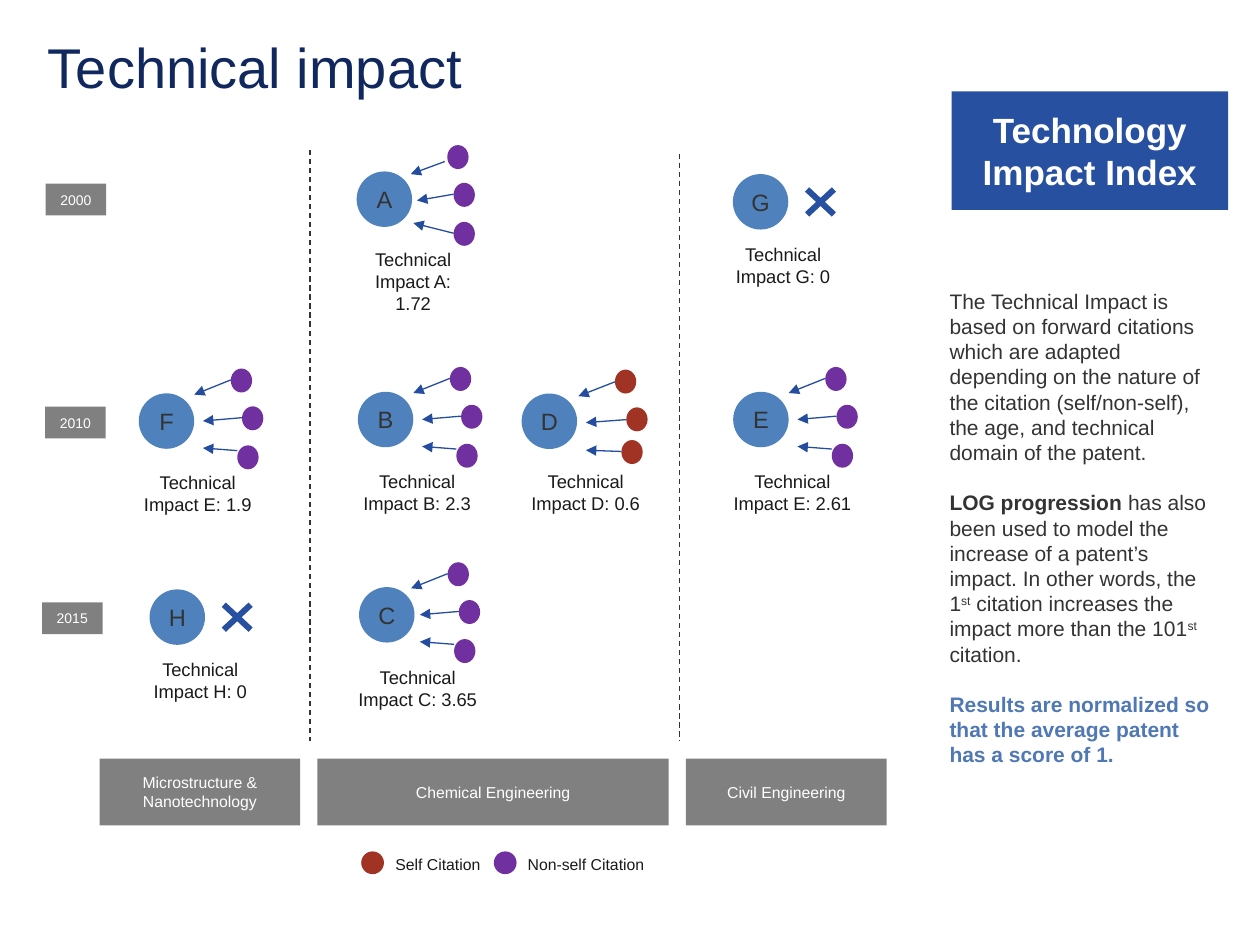
from pptx import Presentation
from pptx.dml.color import RGBColor
from pptx.enum import dml, shapes, text
from pptx.oxml.ns import qn
from pptx.util import Pt
from lxml import etree

NAVY = RGBColor(0x10, 0x28, 0x5D)
BLUE = RGBColor(0x28, 0x50, 0xA0)
ARROW = RGBColor(0x24, 0x4D, 0x9F)
SKY = RGBColor(0x4F, 0x81, 0xBD)
NOTE = RGBColor(0x50, 0x78, 0xB4)
PURPLE = RGBColor(0x70, 0x30, 0xA0)
RED = RGBColor(0xA1, 0x33, 0x25)
GRAY = RGBColor(0x80, 0x80, 0x80)
DARK = RGBColor(0x33, 0x33, 0x33)
INK = RGBColor(0x1A, 0x1A, 0x1A)
WHITE = RGBColor(0xFF, 0xFF, 0xFF)

KIND = shapes.MSO_SHAPE
ALIGN = text.PP_ALIGN
ANCHOR = text.MSO_ANCHOR

deck = Presentation()
deck.slide_width, deck.slide_height = Pt(720), Pt(540)
slide = deck.slides.add_slide(deck.slide_layouts[5])


def write(para, words, size=12, color=INK, bold=False, align=None, base=None):
    """Add one formatted run to a paragraph."""
    run = para.add_run()
    run.text = words
    run.font.name = "Arial"
    run.font.size = Pt(size)
    run.font.bold = bold
    run.font.color.rgb = color
    if align is not None:
        para.alignment = align
    if base:
        run.font._element.set("baseline", str(base * 1000))


def place(kind, x, y, w, h, fill=None):
    """Add a plain filled shape, or a text box if kind is None; return its first paragraph."""
    spot = Pt(x), Pt(y), Pt(w), Pt(h)
    if kind is None:
        shape = slide.shapes.add_textbox(*spot)
        shape.text_frame.word_wrap = True
        return shape.text_frame.paragraphs[0]
    shape = slide.shapes.add_shape(kind, *spot)
    shape.shadow.inherit = False
    shape.fill.solid()
    shape.fill.fore_color.rgb = fill
    shape.line.fill.background()
    if kind == KIND.MATH_MULTIPLY:
        shape.adjustments[0] = 0.125
    frame = shape.text_frame
    frame.vertical_anchor = ANCHOR.MIDDLE
    if kind == KIND.OVAL:
        frame.margin_left = frame.margin_right = 0
        frame.margin_top = frame.margin_bottom = 0
    return frame.paragraphs[0]


# Title
title = slide.shapes.title
title.left, title.top, title.width, title.height = Pt(20.2), Pt(15.1), Pt(680.4), Pt(95.8)
title.text_frame.vertical_anchor = ANCHOR.TOP
title.text_frame.auto_size = text.MSO_AUTO_SIZE.NONE
write(title.text_frame.paragraphs[0], "Technical impact", size=32, color=NAVY, align=ALIGN.LEFT)

# Years and technical fields
for x, y, year in [(26.1, 105, "2000"), (25.8, 232.4, "2010"), (24, 344.2, "2015")]:
    write(place(KIND.RECTANGLE, x, y, 34.6, 18.2, GRAY), year,
          size=8, color=WHITE, align=ALIGN.CENTER)
for x, w, field in [(56.9, 114.7, "Microstructure & Nanotechnology"),
                    (181.4, 200.7, "Chemical Engineering"),
                    (392, 114.7, "Civil Engineering")]:
    write(place(KIND.RECTANGLE, x, 433.5, w, 38.2, GRAY), field,
          size=9, color=WHITE, align=ALIGN.CENTER)

# Citation fans, relative to the patent circle:
# dot x, dot y, arrow start x and y within the dot, arrow tip x, tip y
FAN = [(52.6, -14.2, 0, 6.5, 31.7, 0.7),
       (59, 7.4, 0, 6.5, 36.7, 15.8),
       (56.3, 29.7, 0, 3, 36.7, 31.2)]
FAN_A = [(51.8, -15.1, -1.4, 9.4, 30.9, 1.5),
         (55.4, 6.5, 0, 6.5, 34.5, 16.6),
         (55.4, 28.8, 0, 6.5, 32.4, 29.5)]
FAN_D = [(53.3, -13.7, 0, 7, 32.4, 1.5),
         (59.8, 7.9, 0, 7, 36.7, 16.6),
         (57, 26.6, 0, 6.5, 36.7, 32.4)]

# Patents: letter, circle x, y, label, label x, y, width, fan, fan shift, dot colour
PATENTS = [
    ("A", 203.8, 98, "A: 1.72", 195.8, 138.2, 80.6, FAN_A, 0, PURPLE),
    ("B", 204.5, 223.9, "B: 2.3", 196.6, 265, 83.5, FAN, 0, PURPLE),
    ("C", 205.2, 335.5, "C: 3.65", 196.6, 377.3, 84.2, FAN, -2, PURPLE),
    ("D", 298.1, 224.9, "D: 0.6", 293, 265, 83.5, FAN_D, 0, RED),
    ("E", 419, 223.9, "E: 2.61", 411.1, 265, 83.5, FAN, 0, PURPLE),
    ("F", 79.3, 224.8, "E: 1.9", 71.3, 265.9, 83.5, FAN, 0, PURPLE),
    ("G", 418.8, 99.5, "G: 0", 405.4, 135.4, 84.2, None, 0, None),
    ("H", 85.5, 336.8, "H: 0", 71.3, 372.4, 86.4, None, 0, None),
]
links = []
for name, x, y, score, left, top, width, fan, shift, color in PATENTS:
    write(place(KIND.OVAL, x, y, 31.7, 31.7, SKY), name,
          size=13.5, color=DARK, align=ALIGN.CENTER)
    write(place(None, left, top, width, 32.4), "Technical Impact " + score,
          size=10.5, align=ALIGN.CENTER)
    if fan is None:
        place(KIND.MATH_MULTIPLY, x + 35.3, y + 2.2, 29.5, 27.4, BLUE)
        continue
    for dx, dy, sx, sy, tx, ty in fan:
        dx, tx = x + dx + shift, x + tx + shift
        place(KIND.OVAL, dx, y + dy, 12.2, 13.7, color)
        links.append((dx + sx, y + dy + sy, tx, y + ty, ARROW, True))

# Arrows and dashed column dividers
links += [(177.1, 85.7, 177.1, 423.4, DARK, False),
          (388.1, 87.8, 388.1, 423.4, DARK, False)]
for x, y, tx, ty, color, arrow in links:
    link = slide.shapes.add_connector(shapes.MSO_CONNECTOR.STRAIGHT, Pt(x), Pt(y), Pt(tx), Pt(ty))
    link.line.width = Pt(0.75)
    link.line.color.rgb = color
    if arrow:
        etree.SubElement(link.line._get_or_add_ln(), qn("a:tailEnd"), type="triangle")
    else:
        link.line.dash_style = dml.MSO_LINE.DASH
    etree.SubElement(link._element.spPr, qn("a:effectLst"))

# Legend
for x, gap, w, color, words in [(206.4, 12.5, 108.7, RED, "Self Citation"),
                                (282.2, 12.3, 86, PURPLE, "Non-self Citation")]:
    place(KIND.OVAL, x, 486.5, 13, 13, color)
    write(place(None, x + gap, 484.6, w, 18), words, size=9)

# Index panel
write(place(KIND.RECTANGLE, 543.8, 52.3, 158, 67.7, BLUE), "Technology Impact Index",
      size=20, color=WHITE, bold=True, align=ALIGN.CENTER)

# Explanation: paragraphs of (words, format)
UP = {"base": 30}
NOTES = [
    [("The Technical Impact is based on forward citations which are adapted depending on "
      "the nature of the citation (self/non-self), the age, and technical domain of the "
      "patent.", {})],
    [("LOG progression ", {"bold": True}),
     ("has also been used to model the increase of a patent’s impact. In other words, the 1", {}),
     ("st", UP), (" citation increases the impact more than the 101", {}),
     ("st", UP), (" citation.", {})],
    [("Results are normalized so that the average patent has a score of 1.",
      {"bold": True, "color": NOTE})],
]
para = place(None, 535.5, 161.3, 167, 298.1)
frame = para._parent
for i, runs in enumerate(NOTES):
    if i:
        para = frame.add_paragraph()
        para.space_before = Pt(14.4)
    for words, style in runs:
        write(para, words, **{"color": DARK, **style})

deck.save("out.pptx")
